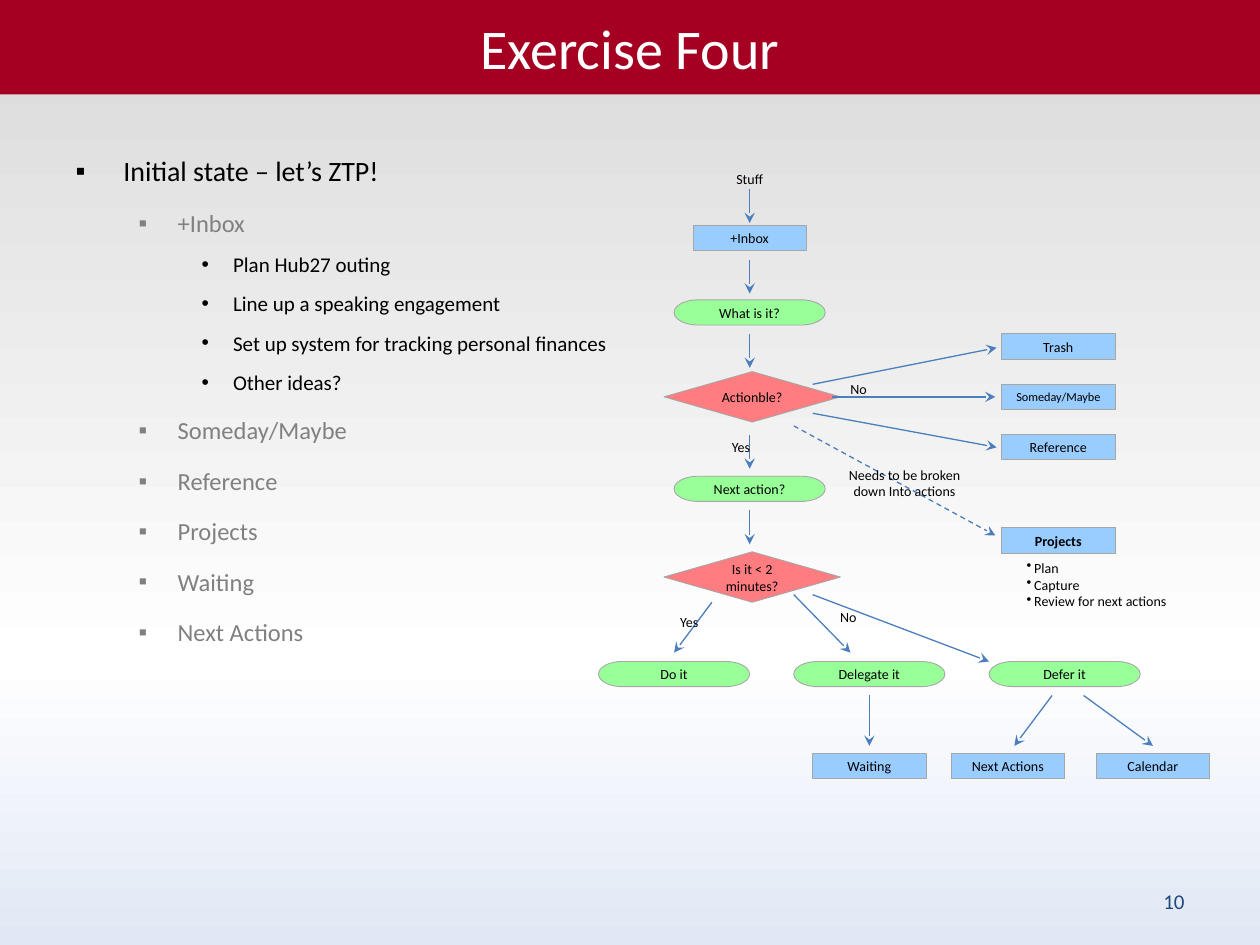
from copy import deepcopy
from dataclasses import dataclass

from pptx import Presentation
from pptx.dml.color import RGBColor as RGB
from pptx.enum.dml import MSO_LINE as Dash
from pptx.enum.shapes import MSO_CONNECTOR as Conn, MSO_SHAPE as Geo
from pptx.enum.text import MSO_ANCHOR as Anchor, MSO_AUTO_SIZE as Fit, PP_ALIGN as Align
from pptx.oxml.ns import qn
from pptx.oxml.xmlchemy import OxmlElement as Node
from pptx.util import Inches, Pt


@dataclass(frozen=True)
class Theme:
    font: str = "Calibri"
    band: str = "A50021"
    white: str = "FFFFFF"
    ink: str = "000000"
    gray: str = "808080"
    page: str = "1F497D"
    edge: str = "A6A6A6"
    arrow: str = "4B7EBC"
    back: tuple = (("D9D9D9", 0), ("FFFFFF", 0.7), ("E1E8F5", 1))
    head: int = 32
    foot: int = 12
    small: int = 8
    tiny: int = 7


T = Theme()

# Content: title and list (level, text)
TITLE = "Exercise Four"
ITEMS = [
    (0, "Initial state – let’s ZTP!"),
    (1, "+Inbox"),
    (2, "Plan Hub27 outing"),
    (2, "Line up a speaking engagement"),
    (2, "Set up system for tracking personal finances"),
    (2, "Other ideas?"),
    (1, "Someday/Maybe"),
    (1, "Reference"),
    (1, "Projects"),
    (1, "Waiting"),
    (1, "Next Actions"),
]
LEVELS = [
    dict(size=16, color=T.ink, before=24, bullet="▪", left=0.38, hang=0.38),
    dict(size=14, color=T.gray, before=12, bullet="▪", left=0.81, hang=0.31),
    dict(size=12, color=T.ink, before=8, bullet="•", left=1.25, hang=0.25),
]

# Flow chart grid: column centres and row tops, in inches
MAIN, GAP, SIDE = 5.95, 1.55, 8.4
ACTS, LEAVES = 5.25, 5.98
KINDS = {  # shape, fill, width, height
    "step": (Geo.FLOWCHART_TERMINATOR, "99FF99", 1.2, 0.2),
    "test": (Geo.FLOWCHART_DECISION, "FF7C80", 1.4, 0.4),
    "list": (Geo.FLOWCHART_PROCESS, "99CCFF", 0.9, 0.2),
}
NODES = [  # text, kind, centre, top, format
    ("+Inbox", "list", MAIN, 1.79, {}),
    ("What is it?", "step", MAIN, 2.38, {}),
    ("Actionble?", "test", MAIN + 0.02, 2.95, {}),
    ("Next action?", "step", MAIN, 3.78, {}),
    ("Is it < 2 minutes?", "test", MAIN + 0.02, 4.38, {}),
    ("Projects", "list", SIDE, 4.19, dict(bold=True)),
    ("Waiting", "list", 6.9, LEAVES, {}),
    ("Next Actions", "list", 8, LEAVES, {}),
    ("Calendar", "list", 9.15, LEAVES, {}),
]
NODES += [(name, "list", SIDE, 2.65 + 0.4 * i, dict(size=size))
          for i, (name, size) in enumerate([("Trash", T.small), ("Someday/Maybe", T.tiny),
                                            ("Reference", T.small)])]
NODES += [(name, "step", MAIN - 0.6 + GAP * i, ACTS, {})
          for i, name in enumerate(["Do it", "Delegate it", "Defer it"])]

DROPS = [1.5, 2.06, 2.65, 3.45, 4.05]  # tops of the arrows down the main column
ARROWS = [(MAIN, y, MAIN, y + 0.27) for y in DROPS] + [
    (6.45, 3.05, 7.91, 2.76),
    (6.6, 3.15, 7.9, 3.15),
    (6.45, 3.28, 7.91, 3.55),
    (5.65, 4.78, 5.35, 5.18),
    (6.3, 4.72, 6.75, 5.18),
    (6.45, 4.72, 7.85, 5.25),
    (6.9, 5.52, 6.9, 5.92),
    (8.35, 5.52, 8.05, 5.92),
    (8.6, 5.52, 9.15, 5.92),
]
DASHED = (6.3, 3.38, 7.9, 4.25)

MARK = dict(bullet="•", left=0.06, hang=0.06)
LABELS = [  # lines, box, format
    (["Yes"], (5.71, 3.43, 0.36, 0.24), {}),
    (["No"], (6.65, 2.97, 0.33, 0.24), {}),
    (["Yes"], (5.3, 4.82, 0.36, 0.24), {}),
    (["No"], (6.57, 4.78, 0.33, 0.24), {}),
    (["Plan", "Capture", "Review for next actions"], (8.05, 4.39, 1.33, 0.5), MARK),
    (["Needs to be broken", "down Into actions"], (6.63, 3.65, 1.1, 0.37),
     dict(align=Align.CENTER)),
]


def write(frame, text, size=T.small, color=T.ink, bold=False, align=Align.LEFT,
          before=0, bullet=None, left=0, hang=0):
    """Add one paragraph, using the empty first one if there is one."""
    para = frame.paragraphs[0]
    if para.runs:
        para = frame.add_paragraph()
        para.space_before = Pt(before)
    else:
        para.space_before = Pt(0)
    para.alignment = align
    if bullet:
        props = para._p.get_or_add_pPr()
        props.set("marL", str(Inches(left)))
        props.set("indent", str(-Inches(hang)))
        char = Node("a:buChar")
        char.set("char", bullet)
        props.append(char)
    run = para.add_run()
    run.text = text
    font = run.font
    font.name, font.size, font.bold = T.font, Pt(size), bold
    font.color.rgb = RGB.from_string(color)
    return para


def place(shape, box):
    shape.left, shape.top, shape.width, shape.height = map(Inches, box)


def paint(shape, color):
    shape.fill.solid()
    shape.fill.fore_color.rgb = RGB.from_string(color)


def label(slide, box, wrap=False):
    frame = slide.shapes.add_textbox(*map(Inches, box)).text_frame
    frame.word_wrap = wrap
    frame.auto_size = Fit.NONE if wrap else Fit.SHAPE_TO_FIT_TEXT
    frame.vertical_anchor = Anchor.MIDDLE if wrap else Anchor.TOP
    return frame


def node(slide, text, kind, mid, top, style):
    geo, fill, wide, high = KINDS[kind]
    shape = slide.shapes.add_shape(geo, *map(Inches, (mid - wide / 2, top, wide, high)))
    shape.shadow.inherit = False
    paint(shape, fill)
    shape.line.color.rgb = RGB.from_string(T.edge)
    shape.line.width = Pt(0.5)
    shape.text_frame.vertical_anchor = Anchor.MIDDLE
    write(shape.text_frame, text, align=Align.CENTER, **style)


def arrow(slide, ends, dash=None):
    link = slide.shapes.add_connector(Conn.STRAIGHT, *map(Inches, ends))
    link.line.color.rgb = RGB.from_string(T.arrow)
    link.line.width = Pt(0.75)
    if dash:
        link.line.dash_style = dash
    tip = Node("a:tailEnd")
    tip.set("type", "stealth")
    link.line._get_or_add_ln().append(tip)
    link._element.spPr.append(Node("a:effectLst"))


def backdrop(slide):
    fill = slide.background.fill
    fill.gradient()
    fill.gradient_angle = 270
    stops = slide.element.find(".//" + qn("a:gsLst"))
    stops.append(deepcopy(stops[-1]))
    for stop, (color, share) in zip(fill.gradient_stops, T.back):
        stop.color.rgb = RGB.from_string(color)
        stop.position = share


def main():
    deck = Presentation()
    deck.slide_width, deck.slide_height = Inches(10), Inches(7.5)
    slide = deck.slides.add_slide(deck.slide_layouts[1])
    backdrop(slide)

    # Title band and list
    title, body = slide.placeholders
    place(title, (0, 0, 10, 0.75))
    paint(title, T.band)
    title.text_frame.vertical_anchor = Anchor.MIDDLE
    write(title.text_frame, TITLE, size=T.head, color=T.white, align=Align.CENTER)
    place(body, (0.5, 1.17, 9, 5.53))
    body.text_frame.auto_size = Fit.NONE
    for level, text in ITEMS:
        write(body.text_frame, text, **LEVELS[level]).level = level

    # Page number and chart entry
    write(label(slide, (7.17, 6.95, 2.33, 0.4), wrap=True), "10",
          size=T.foot, color=T.page, align=Align.RIGHT)
    write(label(slide, (MAIN - 0.75, 1.32, 1.5, 0.2), wrap=True), "Stuff",
          align=Align.CENTER)

    # Flow chart
    for item in NODES:
        node(slide, *item)
    for ends in ARROWS:
        arrow(slide, ends)
    arrow(slide, DASHED, Dash.DASH)
    for lines, box, style in LABELS:
        frame = label(slide, box)
        for line in lines:
            write(frame, line, **style)

    deck.save("out.pptx")


if __name__ == "__main__":
    main()
